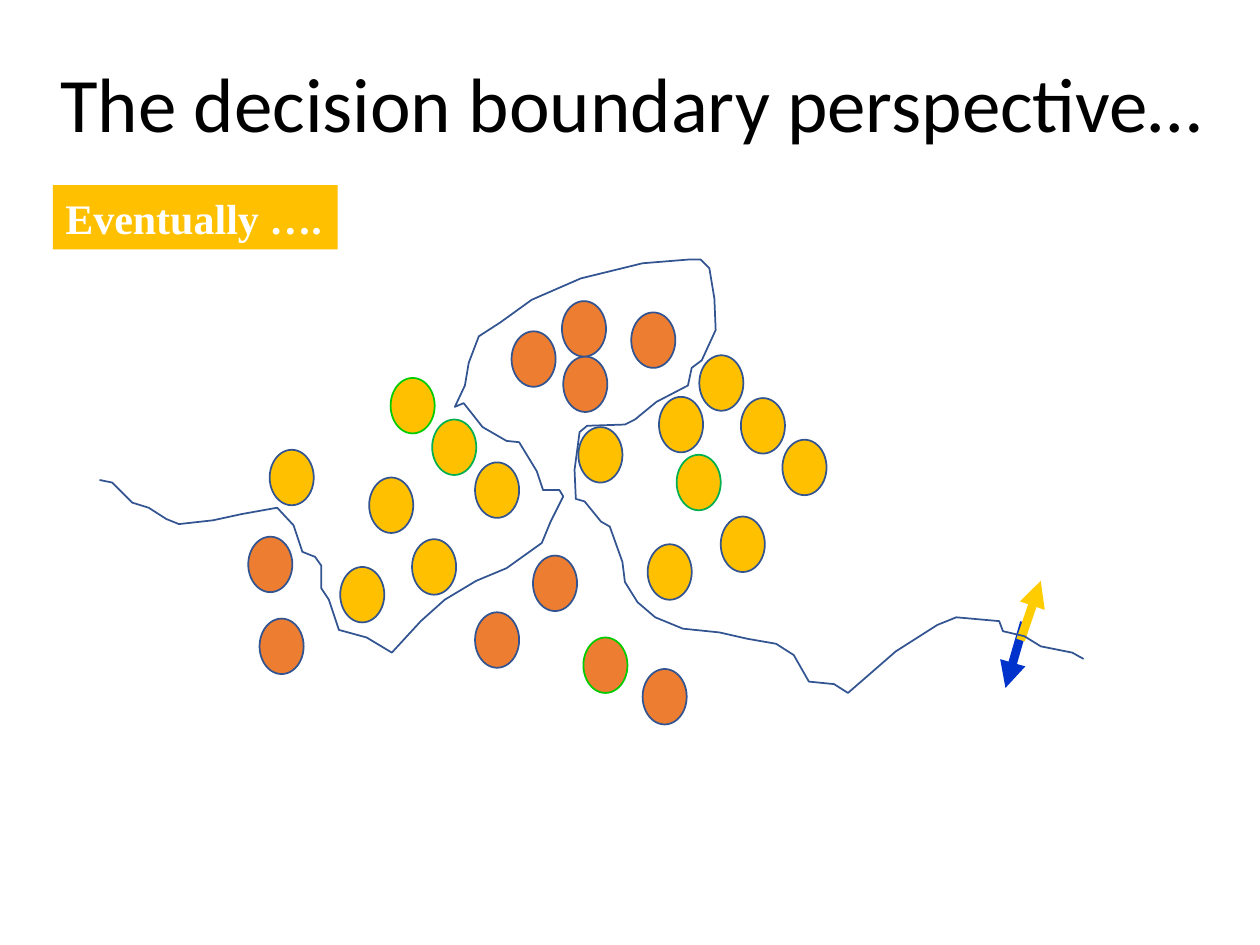
"""Build the decision boundary slide with its two classes of dots."""
from typing import NamedTuple

import lxml.etree
import pptx
import pptx.dml.color
import pptx.enum.shapes
import pptx.enum.text
import pptx.oxml.ns
import pptx.util

Inches = pptx.util.Inches
Pt = pptx.util.Pt
qn = pptx.oxml.ns.qn

ORANGE, GOLD = "ED7D31", "FFC000"
NAVY, LIME, GREEN = "325491", "00CC00", "00B050"


class Group(NamedTuple):
    fill: str
    edge: str
    spots: list[tuple[float, float]]


class Arrow(NamedTuple):
    start: tuple[float, float]
    end: tuple[float, float]
    color: str


class Label(NamedTuple):
    text: str
    box: tuple[float, float, float, float]
    font: str
    size: int
    color: str
    bold: bool = False
    fill: str = ""


LABELS = [
    Label("The decision boundary perspective…", (0.38, 0.44, 9.62, 0.82),
          "Calibri", 44, "000000"),
    Label("Eventually ….", (0.42, 1.47, 2.26, 0.51),
          "Times New Roman", 24, "FFFFFF", True, GOLD),
]
GROUPS = [
    Group(ORANGE, NAVY, [
        (5.1, 5.31), (4.06, 2.63), (2.06, 4.91), (1.97, 4.26), (5.01, 2.48),
        (4.47, 2.83), (3.77, 4.86), (4.23, 4.41), (4.46, 2.39)]),
    Group(ORANGE, LIME, [(4.63, 5.06)]),
    Group(GOLD, NAVY, [
        (2.93, 3.79), (3.27, 4.28), (3.77, 3.67), (2.7, 4.5), (2.14, 3.57),
        (5.55, 2.82), (5.88, 3.16), (5.72, 4.1), (6.21, 3.49), (5.14, 4.32),
        (4.59, 3.39), (5.23, 3.15)]),
    Group(GOLD, LIME, [(3.1, 3)]),
    Group(GOLD, GREEN, [(3.43, 3.33), (5.37, 3.61)]),
]
ARROWS = [
    Arrow((8.13, 4.94), (7.98, 5.46), "0033CC"),
    Arrow((8.1, 5.08), (8.26, 4.61), "FFCC00"),
]
BORDER = [
    (79, 381), (89, 383), (105, 399), (118, 403), (132, 412), (142, 416),
    (169, 413), (192, 408), (220, 403), (233, 417), (240, 438), (250, 442),
    (255, 449), (255, 467), (261, 476), (269, 500), (291, 506), (311, 518),
    (334, 493), (353, 476), (378, 461), (402, 451), (430, 431), (437, 414),
    (447, 394), (444, 389), (431, 389), (426, 374), (412, 351), (402, 350),
    (383, 339), (368, 320), (361, 323), (369, 306), (372, 288), (380, 267),
    (397, 256), (422, 238), (461, 221), (510, 209), (547, 206), (556, 206),
    (563, 213), (567, 237), (568, 262), (557, 286), (549, 292), (546, 306),
    (521, 319), (504, 333), (496, 337), (466, 338), (460, 343), (456, 373),
    (457, 396), (464, 398), (477, 414), (484, 418), (494, 446), (496, 462),
    (506, 478), (520, 490), (542, 499), (571, 502), (593, 507), (616, 511),
    (630, 520), (642, 541), (662, 543), (673, 550), (711, 517), (744, 496),
    (759, 490), (793, 493), (796, 501), (813, 505), (826, 513), (851, 518),
    (860, 523),
]


def tint(color: str) -> pptx.dml.color.RGBColor:
    return pptx.dml.color.RGBColor.from_string(color)


def stroke(line, color: str, width: float) -> None:
    line.color.rgb = tint(color)
    line.width = Pt(width)


def paint(item, color: str) -> None:
    item.fill.solid()
    item.fill.fore_color.rgb = tint(color)


def write(slide, label: Label) -> None:
    box = slide.shapes.add_textbox(*map(Inches, label.box))
    frame = box.text_frame
    frame.vertical_anchor = pptx.enum.text.MSO_ANCHOR.MIDDLE
    frame.word_wrap = not label.fill
    if label.fill:
        paint(box, label.fill)
        frame.auto_size = pptx.enum.text.MSO_AUTO_SIZE.SHAPE_TO_FIT_TEXT
    para = frame.paragraphs[0]
    para.line_spacing = 1.0 if label.fill else 0.9
    run = para.add_run()
    run.text = label.text
    run.font.name = label.font
    run.font.size = Pt(label.size)
    run.font.bold = label.bold
    run.font.color.rgb = tint(label.color)


def dots(slide, group: Group) -> None:
    oval = pptx.enum.shapes.MSO_SHAPE.OVAL
    for left, top in group.spots:
        dot = slide.shapes.add_shape(
            oval, Inches(left), Inches(top), Inches(0.35), Inches(0.44))
        dot.shadow.inherit = False
        paint(dot, group.fill)
        stroke(dot.line, group.edge, 1)


def point(slide, arrow: Arrow) -> None:
    link = slide.shapes.add_connector(
        pptx.enum.shapes.MSO_CONNECTOR.STRAIGHT,
        *map(Inches, arrow.start + arrow.end))
    stroke(link.line, arrow.color, 5)
    props = link.element.spPr
    lxml.etree.SubElement(
        props.find(qn("a:ln")), qn("a:tailEnd"), type="triangle")
    lxml.etree.SubElement(props, qn("a:effectLst"))


def trace(slide, points: list[tuple[int, int]]) -> None:
    pen = slide.shapes.build_freeform(*points[0], scale=Inches(0.01))
    pen.add_line_segments(points[1:], close=False)
    curve = pen.convert_to_shape()
    curve.shadow.inherit = False
    curve.fill.background()
    stroke(curve.line, NAVY, 1)


def main() -> None:
    deck = pptx.Presentation()
    deck.slide_width, deck.slide_height = Inches(10), Inches(7.5)
    slide = deck.slides.add_slide(deck.slide_layouts[6])
    for group in GROUPS:
        dots(slide, group)
    for arrow in ARROWS:
        point(slide, arrow)
    for label in LABELS:
        write(slide, label)
    trace(slide, BORDER)
    deck.save("out.pptx")


if __name__ == "__main__":
    main()
